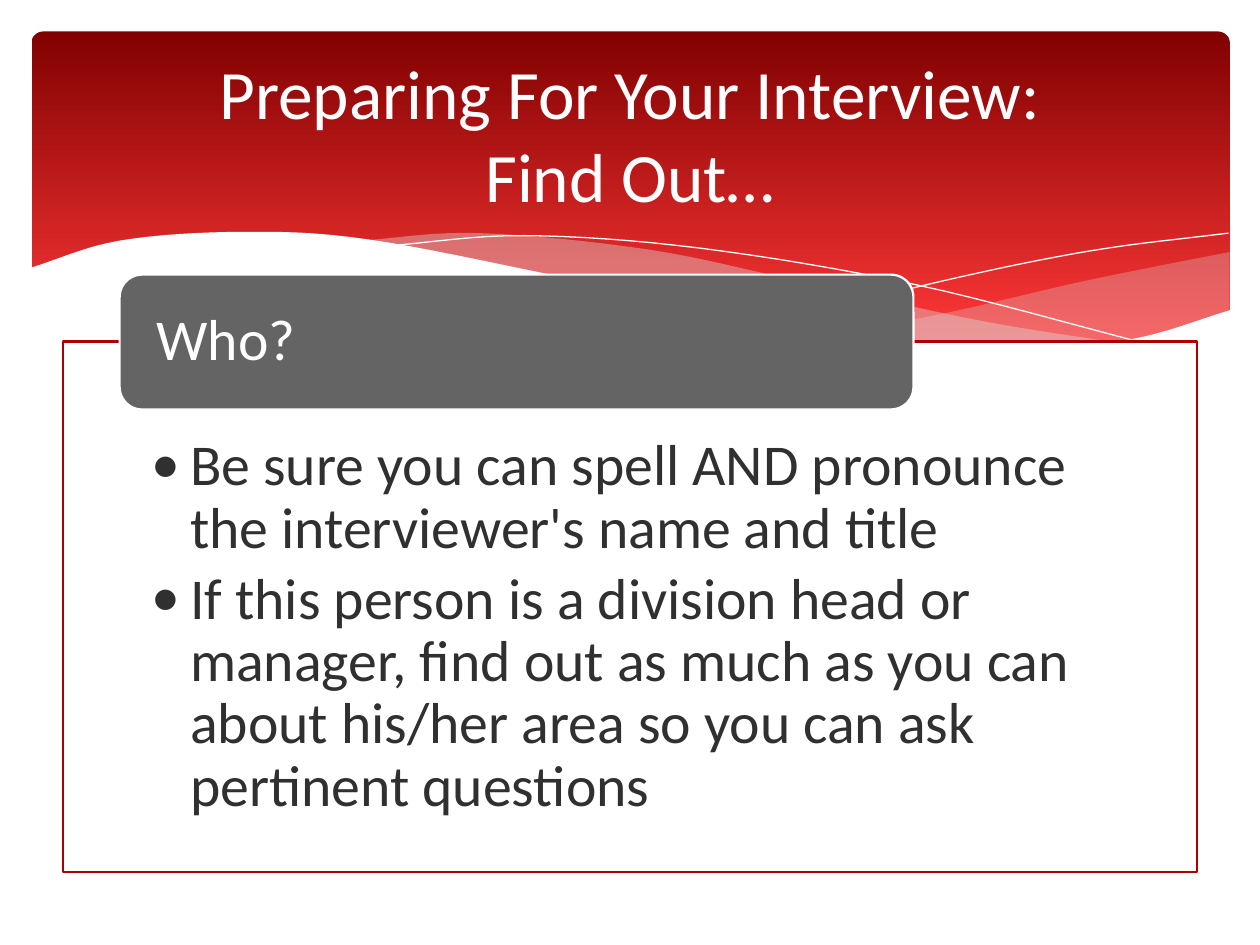
from itertools import chain
from lxml import etree
from pptx import Presentation, util as u
from pptx.dml.color import RGBColor
from pptx.enum import shapes, text
from pptx.oxml.ns import qn

TITLE = "Preparing For Your Interview:\nFind Out…"
LABEL = "Who?"
POINTS = [
    "Be sure you can spell AND pronounce the interviewer's name and title",
    "If this person is a division head or manager, find out as much as you can "
    "about his/her area so you can ask pertinent questions",
]
FONT = "Calibri"
WHITE, MIST, RED, GREY, INK = "FFFFFF", "DEDEE0", "AD0101", "646464", "303030"
BANNER_STOPS = [("820101", 0), ("FE3737", 0.9)]

BANNER_BOX = (0.25, 0.25, 9.51, 2.7)
TITLE_BOX = (0.5, 0.37, 9, 1.37)
PANEL_BOX = (0.5, 2.71, 9, 4.21)
LABEL_BOX = (0.95, 2.18, 6.3, 1.07)
HANGING = 0.31
STEPS = 8

RIGHT_TOP = [(9.76, 2), (8.61, 2.23), (7.53, 2.48), (6.61, 2.65)]
RIGHT_BOTTOM = [(6.61, 2.65), (7.45, 2.75), (8.14, 2.78), (8.89, 2.72), (9.76, 2.47)]
MIDDLE_TOP = [(8.93, 2.73), (7.75, 2.54), (6.29, 2.22), (5.14, 1.98), (3.8, 1.85), (2.86, 1.91)]
MIDDLE_BOTTOM = [(2.86, 1.91), (4.49, 2.22), (5.66, 2.48), (6.95, 2.7), (8.07, 2.78), (8.93, 2.73)]
FALLING = [(3.09, 1.95), (4.16, 1.87), (5.56, 1.97), (7.27, 2.26), (9.07, 2.72)]
RISING = [(6.13, 2.57), (7.48, 2.23), (8.66, 1.99), (9.75, 1.85)]
CREST = [(9.77, 2.46), (8.99, 2.69), (8.09, 2.77), (6.48, 2.62), (4.47, 2.2),
         (2.92, 1.9), (1.93, 1.84), (0.95, 1.91), (0.23, 2.13)]
BASE = [(0.23, 3.29), (9.77, 3.29)]

WAVES = [
    {"edges": [RIGHT_TOP, RIGHT_BOTTOM], "fill": MIST, "opacity": 29},
    {"edges": [MIDDLE_TOP, MIDDLE_BOTTOM], "fill": MIST, "opacity": 40},
    {"edges": [FALLING], "line": WHITE},
    {"edges": [RISING], "line": WHITE},
    {"edges": [CREST, BASE], "fill": WHITE},
]


def smooth_edge(knots):
    """Return points on a Catmull-Rom spline through the knots."""
    if len(knots) < 3:
        return knots

    def mirror(end, inner):
        return tuple(2 * a - b for a, b in zip(end, inner))

    padded = [mirror(knots[0], knots[1]), *knots, mirror(knots[-1], knots[-2])]
    points = [knots[0]]
    for before, start, end, after in zip(padded, padded[1:], padded[2:], padded[3:]):
        for step in range(1, STEPS + 1):
            t = step / STEPS
            points.append(tuple(
                b + t / 2 * (c - a + t * (2 * a - 5 * b + 4 * c - d + t * (3 * b - 3 * c + d - a)))
                for a, b, c, d in zip(before, start, end, after)))
    return points


def paint(target, color):
    """Give a fill a solid hex colour, or none."""
    if color:
        target.solid()
        target.fore_color.rgb = RGBColor.from_string(color)
    else:
        target.background()


def style(shape, fill, line=None, width=1.25):
    """Set the fill and outline of a shape and drop its shadow."""
    shape.shadow.inherit = False
    paint(shape.fill, fill)
    paint(shape.line.fill, line)
    if line:
        shape.line.width = u.Pt(width)


def add_block(slide, kind, box, fill=None, line=None):
    """Add a styled preset shape."""
    shape = slide.shapes.add_shape(kind, *map(u.Inches, box))
    style(shape, fill, line)
    return shape


def add_wave(slide, edges, fill=None, opacity=100, line=None):
    """Join smooth edges into one outline, closed when it is filled."""
    points = chain.from_iterable(map(smooth_edge, edges))
    start, *others = [(u.Inches(x), u.Inches(y)) for x, y in points]
    builder = slide.shapes.build_freeform(*start)
    builder.add_line_segments(others, close=bool(fill))
    shape = builder.convert_to_shape()
    style(shape, fill, line, 0)
    if opacity < 100:
        color = shape.element.spPr.find(qn("a:solidFill"))[0]
        etree.SubElement(color, qn("a:alpha"), val=str(opacity * 1000))


def add_banner(slide):
    """Add the rounded gradient banner and the waves along its foot."""
    banner = add_block(slide, shapes.MSO_SHAPE.ROUNDED_RECTANGLE, BANNER_BOX)
    banner.adjustments[0] = 0.034
    banner.fill.gradient()
    banner.fill.gradient_angle = 270
    for stop, (color, position) in zip(banner.fill.gradient_stops, BANNER_STOPS):
        stop.color.rgb = RGBColor.from_string(color)
        stop.position = position
    for wave in WAVES:
        add_wave(slide, **wave)


def write(shape, lines, size, color, margins,
          align=text.PP_ALIGN.LEFT, anchor=text.MSO_ANCHOR.MIDDLE, spacing=0.9):
    """Write paragraphs into a shape and return them."""
    frame = shape.text_frame
    frame.word_wrap = True
    frame.auto_size = text.MSO_AUTO_SIZE.NONE
    frame.vertical_anchor = anchor
    (frame.margin_left, frame.margin_top,
     frame.margin_right, frame.margin_bottom) = map(u.Inches, margins)
    for index, line in enumerate(lines):
        paragraph = frame.add_paragraph() if index else frame.paragraphs[0]
        paragraph.text = line
        paragraph.alignment = align
        paragraph.line_spacing = spacing
        paragraph.font.size = u.Pt(size)
        paragraph.font.name = FONT
        paragraph.font.color.rgb = RGBColor.from_string(color)
    return frame.paragraphs


def add_bullet(paragraph):
    """Give a paragraph a round bullet with a hanging indent."""
    properties = paragraph._p.get_or_add_pPr()
    properties.set("marL", str(u.Inches(HANGING)))
    properties.set("indent", str(u.Inches(-HANGING)))
    font_defaults = properties.find(qn("a:defRPr"))
    font_defaults.addprevious(etree.Element(qn("a:buFont"), typeface=FONT))
    font_defaults.addprevious(etree.Element(qn("a:buChar"), char="•"))


def add_title(slide):
    """Place the title placeholder in front of the banner."""
    title = slide.shapes.title
    title.left, title.top, title.width, title.height = map(u.Inches, TITLE_BOX)
    write(title, [TITLE], 39.6, WHITE, (0.1, 0.05, 0.1, 0.05),
          align=text.PP_ALIGN.CENTER, spacing=1.0)
    title.element.getparent().append(title.element)


def add_panel(slide):
    """Add the bulleted panel and the label that overlaps its top edge."""
    panel = add_block(slide, shapes.MSO_SHAPE.RECTANGLE, PANEL_BOX, WHITE, RED)
    for paragraph in write(panel, POINTS, 33, INK, (0.7, 0.75, 0.7, 0.26),
                           anchor=text.MSO_ANCHOR.TOP):
        paragraph.space_after = u.Pt(5)
        add_bullet(paragraph)
    label = add_block(slide, shapes.MSO_SHAPE.ROUNDED_RECTANGLE, LABEL_BOX, GREY, WHITE)
    write(label, [LABEL], 33, WHITE, (0.24, 0, 0.24, 0))


def main():
    """Build the slide and save it."""
    presentation = Presentation()
    presentation.slide_width, presentation.slide_height = u.Inches(10), u.Inches(7.5)
    slide = presentation.slides.add_slide(presentation.slide_layouts[5])
    add_banner(slide)
    add_title(slide)
    add_panel(slide)
    presentation.save("out.pptx")


if __name__ == "__main__":
    main()
